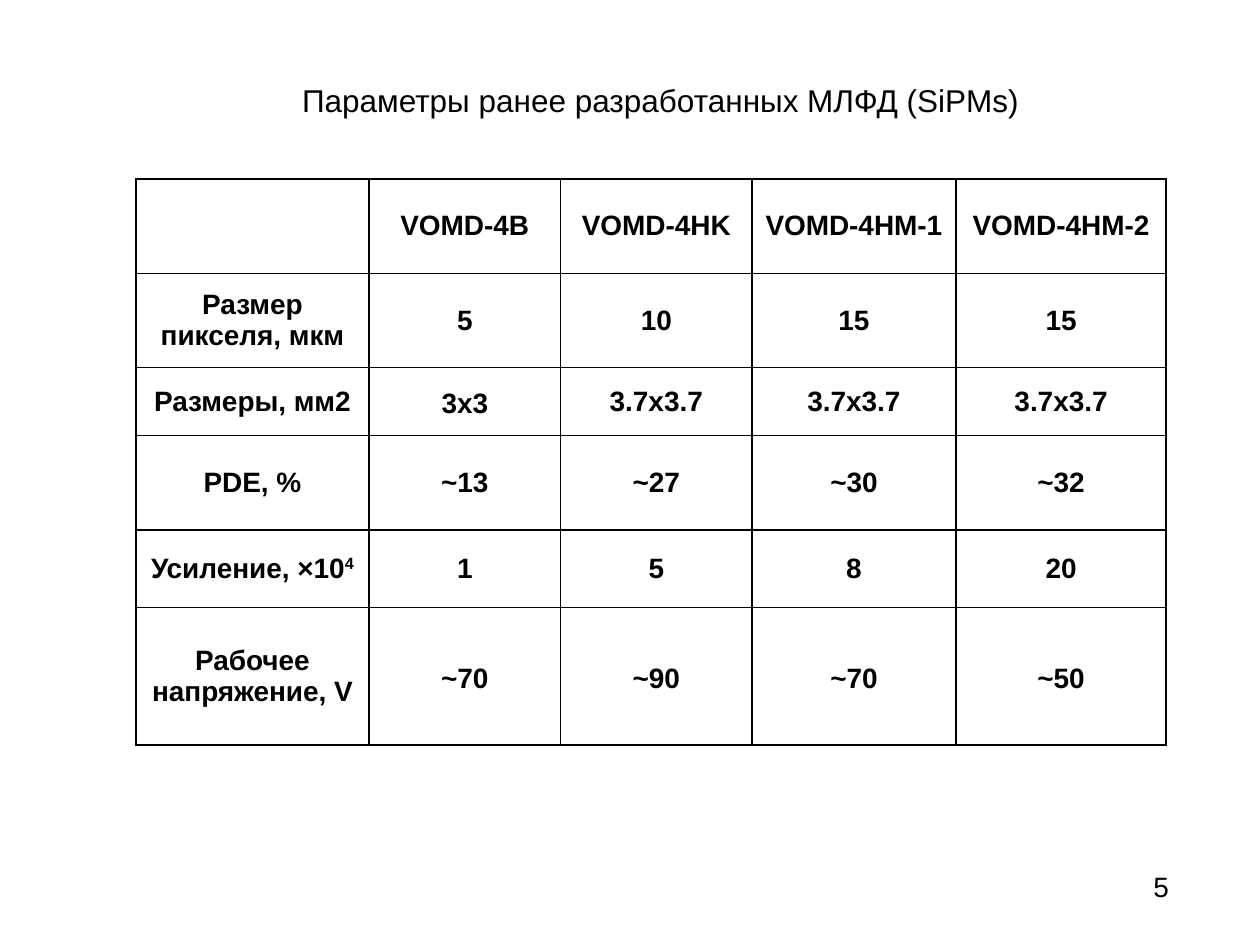
"""Build a slide with a table of SiPM parameters."""
from lxml import etree
from pptx import Presentation
from pptx import util as u
from pptx.dml.color import RGBColor
from pptx.enum import text
from pptx.oxml import ns

BLACK = RGBColor(0, 0, 0)
ROWS = [
    ["", "VOMD-4B", "VOMD-4HK", "VOMD-4HM-1", "VOMD-4HM-2"],
    ["Размер пикселя, мкм", "5", "10", "15", "15"],
    ["Размеры, мм2", "3x3", "3.7x3.7", "3.7x3.7", "3.7x3.7"],
    ["PDE, %", "~13", "~27", "~30", "~32"],
    ["Усиление, ×10", "1", "5", "8", "20"],
    ["Рабочее напряжение, V", "~70", "~90", "~70", "~50"],
]
WIDTHS = [4.7, 3.86, 3.86, 4.11, 4.24]
HEIGHTS = [1.9, 1.9, 1.37, 1.9, 1.57, 2.77]
LOOSE = [(2, 1)] + [(5, col) for col in range(1, 5)]


def style(par, size, bold=False):
    par.font.name = "Arial"
    par.font.size = u.Pt(size)
    par.font.bold = bold
    par.font.color.rgb = BLACK


def frame(cell):
    props = cell._tc.get_or_add_tcPr()
    for spot, side in enumerate(("lnL", "lnR", "lnT", "lnB")):
        line = etree.Element(ns.qn(f"a:{side}"), w=str(u.Pt(1)))
        fill = etree.SubElement(line, ns.qn("a:solidFill"))
        etree.SubElement(fill, ns.qn("a:srgbClr"), val=str(BLACK))
        props.insert(spot, line)


prs = Presentation()
prs.slide_width, prs.slide_height = u.Cm(25.4), u.Cm(19.05)
slide = prs.slides.add_slide(prs.slide_layouts[6])

page = slide.shapes.add_textbox(u.Cm(23.25), u.Cm(17.53), u.Cm(0.71), u.Cm(0.69)).text_frame
page.margin_left = page.margin_right = page.margin_top = page.margin_bottom = 0
page.word_wrap = True
page.text = "5"
style(page.paragraphs[0], 16)

table = slide.shapes.add_table(
    len(ROWS), len(WIDTHS), u.Cm(2.74), u.Cm(3.61), u.Cm(sum(WIDTHS)), u.Cm(sum(HEIGHTS))
).table
table.first_row = table.horz_banding = False
for col, width in zip(table.columns, WIDTHS):
    col.width = u.Cm(width)
for row, height in zip(table.rows, HEIGHTS):
    row.height = u.Cm(height)

for r, row in enumerate(ROWS):
    for c, label in enumerate(row):
        cell = table.cell(r, c)
        cell.fill.background()
        frame(cell)
        cell.vertical_anchor = text.MSO_ANCHOR.MIDDLE
        if c:
            cell.margin_left = cell.margin_right = u.Cm(0.18 if (r, c) in LOOSE else 0.23)
        cell.text = label
        par = cell.text_frame.paragraphs[0]
        par.alignment = text.PP_ALIGN.CENTER
        if (r, c) in LOOSE:
            par.line_spacing = 1.15
        style(par, 16, True)

power = table.cell(4, 0).text_frame.paragraphs[0].add_run()
power.text = "4"
power._r.get_or_add_rPr().set("baseline", "30000")

title = slide.shapes.add_textbox(u.Cm(4.27), u.Cm(1.5), u.Cm(16.84), u.Cm(1.02)).text_frame
title.word_wrap = True
title.margin_left = u.Cm(1.5)
title.text = "Параметры ранее разработанных МЛФД (SiPMs)"
title.paragraphs[0].alignment = text.PP_ALIGN.CENTER
style(title.paragraphs[0], 18)

prs.save("out.pptx")
